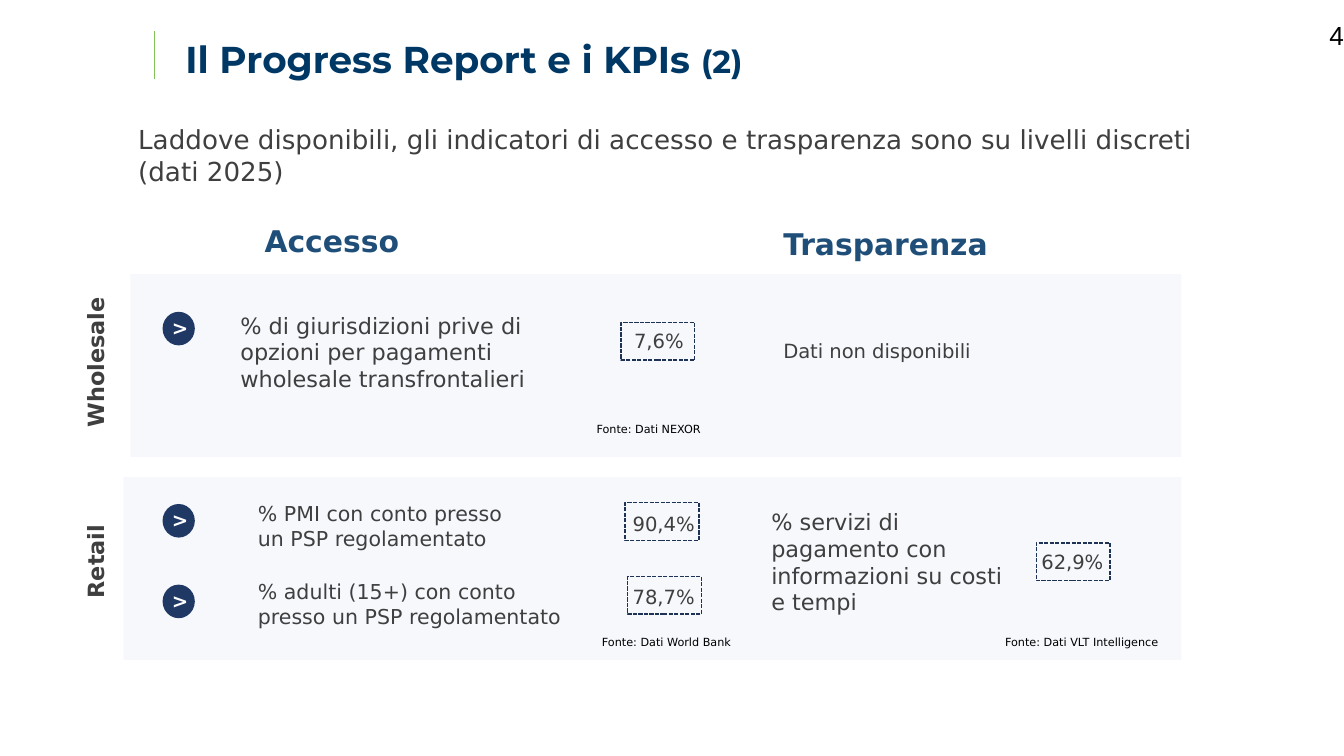
from lxml.etree import SubElement
from pptx import Presentation
from pptx.dml.color import RGBColor
from pptx.enum.dml import MSO_LINE_DASH_STYLE as Dash
from pptx.enum.shapes import MSO_CONNECTOR as Connector, MSO_SHAPE as Shape
from pptx.enum.text import MSO_ANCHOR as Anchor, MSO_AUTO_SIZE as AutoSize, PP_ALIGN as Align
from pptx.oxml.ns import qn
from pptx.util import Inches, Pt

COLORS = {
    "accent": "84C35A",
    "panel": "F0F4FA",
    "title": "003865",
    "heading": "1F4E79",
    "body": "3F3F3F",
    "badge": "203864",
    "frame": "1E3256",
    "black": "000000",
    "white": "FFFFFF",
}


def rgb(name):
    return RGBColor.from_string(COLORS[name])


class KpiSlide:
    font = "DejaVu Sans"

    def __init__(self, presentation):
        self.slide = presentation.slides.add_slide(presentation.slide_layouts[6])
        self.shapes = self.slide.shapes

    def text(self, words, left, top, width, height, size=10.5, color="body", bold=False,
             font=None, after=0, align=Align.LEFT, anchor=Anchor.TOP, inset=True,
             rotation=0, shapes=None):
        box = (shapes or self.shapes).add_textbox(
            Inches(left), Inches(top), Inches(width), Inches(height))
        box.rotation = rotation
        frame = box.text_frame
        frame.word_wrap = True
        frame.auto_size = AutoSize.SHAPE_TO_FIT_TEXT if anchor == Anchor.TOP else AutoSize.NONE
        frame.vertical_anchor = anchor
        if not inset:
            frame.margin_left = frame.margin_right = frame.margin_top = frame.margin_bottom = 0
        paragraph = frame.paragraphs[0]
        paragraph.text = words
        paragraph.alignment = align
        paragraph.space_after = Pt(after)
        paragraph.font.name = font or self.font
        paragraph.font.size = Pt(size)
        paragraph.font.bold = bold
        paragraph.font.color.rgb = rgb(color)
        return paragraph

    def title(self, words, suffix):
        paragraph = self.text(words, 1.38, 0.27, 5.96, 0.34, 20, "title", True,
                              "Montserrat", inset=False)
        ending = paragraph.add_run()
        ending.text = suffix
        ending.font.size = Pt(17)

    def rule(self, x, top, bottom):
        line = self.shapes.add_connector(
            Connector.STRAIGHT, Inches(x), Inches(top), Inches(x), Inches(bottom))
        line.line.color.rgb = rgb("accent")
        line.line.width = Pt(1)
        SubElement(line._element.spPr, qn("a:effectLst"))

    def area(self, kind, left, top, width, height, fill=None, shapes=None):
        shape = (shapes or self.shapes).add_shape(
            kind, Inches(left), Inches(top), Inches(width), Inches(height))
        shape.shadow.inherit = False
        if fill:
            shape.fill.solid()
            shape.fill.fore_color.rgb = rgb(fill)
        else:
            shape.fill.background()
        shape.line.fill.background()
        return shape

    def panel(self, left, top, width):
        panel = self.area(Shape.RECTANGLE, left, top, width, 1.36, "panel")
        color = panel._element.spPr.find(qn("a:solidFill"))[0]
        SubElement(color, qn("a:alpha"), val="60000")

    def badge(self, top):
        group = self.shapes.add_group_shape().shapes
        self.area(Shape.OVAL, 1.21, top, 0.24, 0.25, "badge", group)
        self.text(">", 1.18, top - 0.02, 0.25, 0.29, color="white", bold=True, shapes=group)

    def value(self, words, text_at, text_width, frame_at, grouped=False):
        shapes = self.shapes.add_group_shape().shapes if grouped else self.shapes
        self.text(words, *text_at, text_width, 0.28, after=6, shapes=shapes)
        frame = self.area(Shape.RECTANGLE, *frame_at, 0.55, 0.28, shapes=shapes)
        frame.line.color.rgb = rgb("frame")
        frame.line.width = Pt(0.75)
        frame.line.dash_style = Dash.SQUARE_DOT

    def heading(self, words, left, top):
        self.text(words, left, top, 2.03, 0.37, 16, "heading", True, after=6)

    def row_label(self, words, left, top, width):
        self.text(words, left, top, width, 0.3, 12, bold=True, after=6, rotation=270)

    def source(self, words, left, top, width=2.02):
        self.text(words, left, top, width, 0.2, 6, "black")


def main():
    presentation = Presentation()
    presentation.slide_width = Inches(10)
    presentation.slide_height = Inches(10 * 9 / 16)
    kpi = KpiSlide(presentation)

    kpi.rule(1.15, 0.23, 0.59)
    kpi.panel(0.97, 2.04, 7.82)
    kpi.panel(0.92, 3.55, 7.87)
    kpi.text("4", 7.89, 0.11, 2.11, 0.3, 14, "black", font="Arial",
             align=Align.RIGHT, anchor=Anchor.MIDDLE, inset=False)
    kpi.title("Il Progress Report e i KPIs ", "(2)")
    kpi.text("Laddove disponibili, gli indicatori di accesso e trasparenza sono su livelli "
             "discreti (dati 2025)", 0.93, 0.87, 8.54, 0.57, 14)

    kpi.heading("Accesso", 1.87, 1.61)
    kpi.heading("Trasparenza", 5.73, 1.63)
    kpi.row_label("Wholesale", 0.04, 2.46, 1.34)
    kpi.row_label("Retail", 0.3, 3.99, 0.82)

    for words, left, top, width, height, size, after in (
        ("% di giurisdizioni prive di opzioni per pagamenti wholesale transfrontalieri",
         1.69, 2.27, 2.46, 0.71, 12, 6),
        ("% PMI con conto presso un PSP regolamentato", 1.82, 3.68, 2.2, 0.47, 11, 0),
        ("% adulti (15+) con conto presso un PSP regolamentato",
         1.82, 4.26, 2.56, 0.47, 11, 6),
        ("Dati non disponibili", 5.73, 2.47, 2.21, 0.28, 10.5, 6),
        ("% servizi di pagamento con informazioni su costi e tempi",
         5.64, 3.73, 1.99, 0.91, 12, 0),
    ):
        kpi.text(words, left, top, width, height, size, after=after)

    for top in (2.32, 3.75, 4.35):
        kpi.badge(top)

    kpi.value("7,6%", (4.62, 2.4), 0.74, (4.62, 2.4))
    kpi.value("90,4%", (4.61, 3.76), 0.74, (4.65, 3.74))
    kpi.value("78,7%", (4.61, 4.3), 0.74, (4.67, 4.29))
    kpi.value("62,9%", (7.65, 4.04), 0.98, (7.71, 4.04), grouped=True)

    kpi.source("Fonte: Dati World Bank", 4.38, 4.68)
    kpi.source("Fonte: Dati VLT Intelligence", 7.38, 4.68, 1.42)
    kpi.source("Fonte: Dati NEXOR", 4.34, 3.09)

    presentation.save("out.pptx")


if __name__ == "__main__":
    main()
